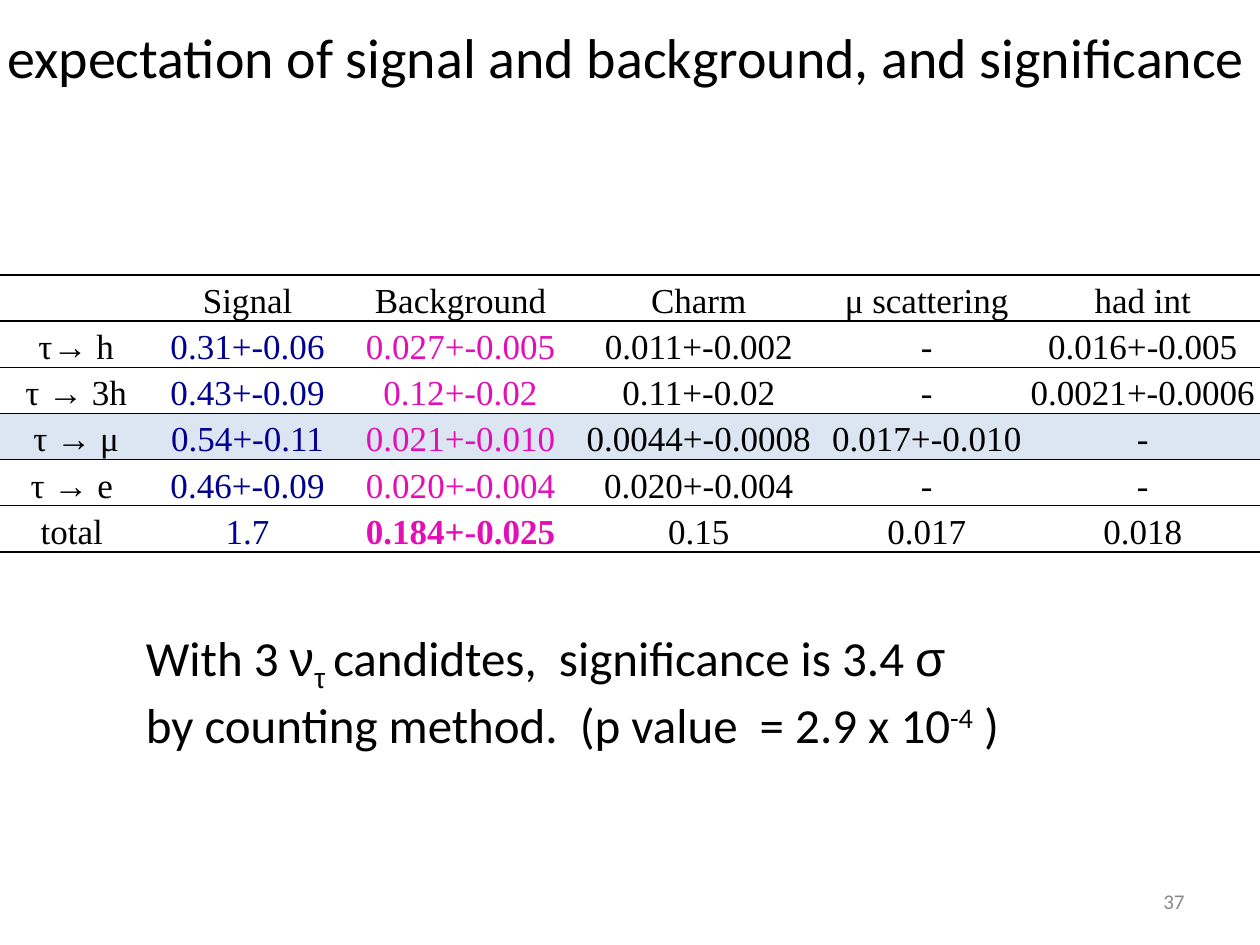
from lxml import etree
from pptx import Presentation
from pptx.dml.color import RGBColor
from pptx.enum.text import MSO_ANCHOR, MSO_AUTO_SIZE, PP_ALIGN
from pptx.oxml.ns import qn
from pptx.util import Pt

TOP, MIDDLE, BOTTOM = MSO_ANCHOR.TOP, MSO_ANCHOR.MIDDLE, MSO_ANCHOR.BOTTOM
LEFT, CENTER, RIGHT = PP_ALIGN.LEFT, PP_ALIGN.CENTER, PP_ALIGN.RIGHT
NO_AUTOSIZE = MSO_AUTO_SIZE.NONE
BLACK, GREY, HIGHLIGHT = "000000", "898989", "DCE6F2"

TITLE = "expectation of signal and background, and significance"
PAGE_NUMBER = "37"
CHANNELS = [
    ("", "Signal", "Background", "Charm", "μ scattering", "had int"),
    (" τ→ h", "0.31+-0.06", "0.027+-0.005", "0.011+-0.002", "-", "0.016+-0.005"),
    (" τ → 3h", "0.43+-0.09", "0.12+-0.02", "0.11+-0.02", "-", "0.0021+-0.0006"),
    (" τ → μ", "0.54+-0.11", "0.021+-0.010", "0.0044+-0.0008", "0.017+-0.010", "-"),
    (" τ → e ", "0.46+-0.09", "0.020+-0.004", "0.020+-0.004", "-", "-"),
    ("total", "1.7", "0.184+-0.025", "0.15", "0.017", "0.018"),
]
COLUMN_WIDTHS = (82.1, 118.8, 124.6, 147.6, 113, 133.9)
ROW_HEIGHT = 26.4
COLUMN_COLORS = {1: "000090", 2: "E30FB6"}
HIGHLIGHT_ROW = 3
BOLD_CELL = (5, 2)
SUMMARY = [
    [("With 3 ", "Calibri", 0), ("ν", "Arial", 0), ("τ ", "Arial", -25),
     ("candidtes,  significance is 3.4 ", "Calibri", 0), ("σ", "Arial", 0)],
    [("by counting method.  (p value  = 2.9 x 10", "Calibri", 0),
     ("-4", "Calibri", 30), (" )", "Calibri", 0)],
]


def style(font, size, color=BLACK, name="Calibri", bold=False):
    font.size, font.name, font.bold = Pt(size), name, bold
    font.color.rgb = RGBColor.from_string(color)


def write_line(frame, text, size, color, align, anchor):
    frame.auto_size = NO_AUTOSIZE
    frame.vertical_anchor = anchor
    paragraph = frame.paragraphs[0]
    paragraph.text, paragraph.alignment = text, align
    style(paragraph.font, size, color)


def set_borders(cell, top, bottom):
    properties = cell._tc.get_or_add_tcPr()
    for index, (side, width) in enumerate(
            (("lnL", 0), ("lnR", 0), ("lnT", top), ("lnB", bottom))):
        line = etree.Element(qn(f"a:{side}"), w=str(Pt(width)))
        if width:
            fill = etree.SubElement(line, qn("a:solidFill"))
            etree.SubElement(fill, qn("a:srgbClr"), val=BLACK)
        else:
            etree.SubElement(line, qn("a:noFill"))
        properties.insert(index, line)


def add_channel_table(slide):
    count = len(CHANNELS)
    table = slide.shapes.add_table(
        count, len(COLUMN_WIDTHS), 0, Pt(157),
        Pt(sum(COLUMN_WIDTHS)), Pt(ROW_HEIGHT * count)).table
    table.first_row = table.horz_banding = False
    for column, width in zip(table.columns, COLUMN_WIDTHS):
        column.width = Pt(width)
    rules = [1, 1] + [0.5] * (count - 2) + [1]
    for r, values in enumerate(CHANNELS):
        table.rows[r].height = Pt(ROW_HEIGHT)
        for c, value in enumerate(values):
            cell = table.cell(r, c)
            cell.margin_left = cell.margin_right = cell.margin_top = Pt(0.72)
            cell.margin_bottom = 0
            cell.vertical_anchor = BOTTOM
            if r == HIGHLIGHT_ROW:
                cell.fill.solid()
                cell.fill.fore_color.rgb = RGBColor.from_string(HIGHLIGHT)
            else:
                cell.fill.background()
            set_borders(cell, rules[r], rules[r + 1])
            paragraph = cell.text_frame.paragraphs[0]
            paragraph.alignment = CENTER
            if value:
                paragraph.text = value
            color = COLUMN_COLORS.get(c, BLACK) if r else BLACK
            style(paragraph.font, 20, color, "Times New Roman", (r, c) == BOLD_CELL)


def add_summary(slide):
    frame = slide.shapes.add_textbox(Pt(76.3), Pt(355), Pt(530), Pt(75)).text_frame
    frame.word_wrap = True
    for index, pieces in enumerate(SUMMARY):
        paragraph = frame.add_paragraph() if index else frame.paragraphs[0]
        for text, name, baseline in pieces:
            run = paragraph.add_run()
            run.text = text
            style(run.font, 28, name=name)
            if baseline:
                run._r.get_or_add_rPr().set("baseline", str(baseline * 1000))


def main():
    deck = Presentation()
    deck.slide_width, deck.slide_height = Pt(720), Pt(540)
    slide = deck.slides.add_slide(deck.slide_layouts[5])

    title = slide.shapes.title
    title.left, title.top, title.width, title.height = Pt(-3), Pt(9.4), Pt(730), Pt(46)
    write_line(title.text_frame, TITLE, 32, BLACK, LEFT, TOP)
    title.text_frame.word_wrap = False

    add_channel_table(slide)
    add_summary(slide)
    number = slide.shapes.add_textbox(Pt(516), Pt(500.5), Pt(168), Pt(28.8))
    number.text_frame.word_wrap = True
    write_line(number.text_frame, PAGE_NUMBER, 12, GREY, RIGHT, MIDDLE)

    deck.save("out.pptx")


if __name__ == "__main__":
    main()
